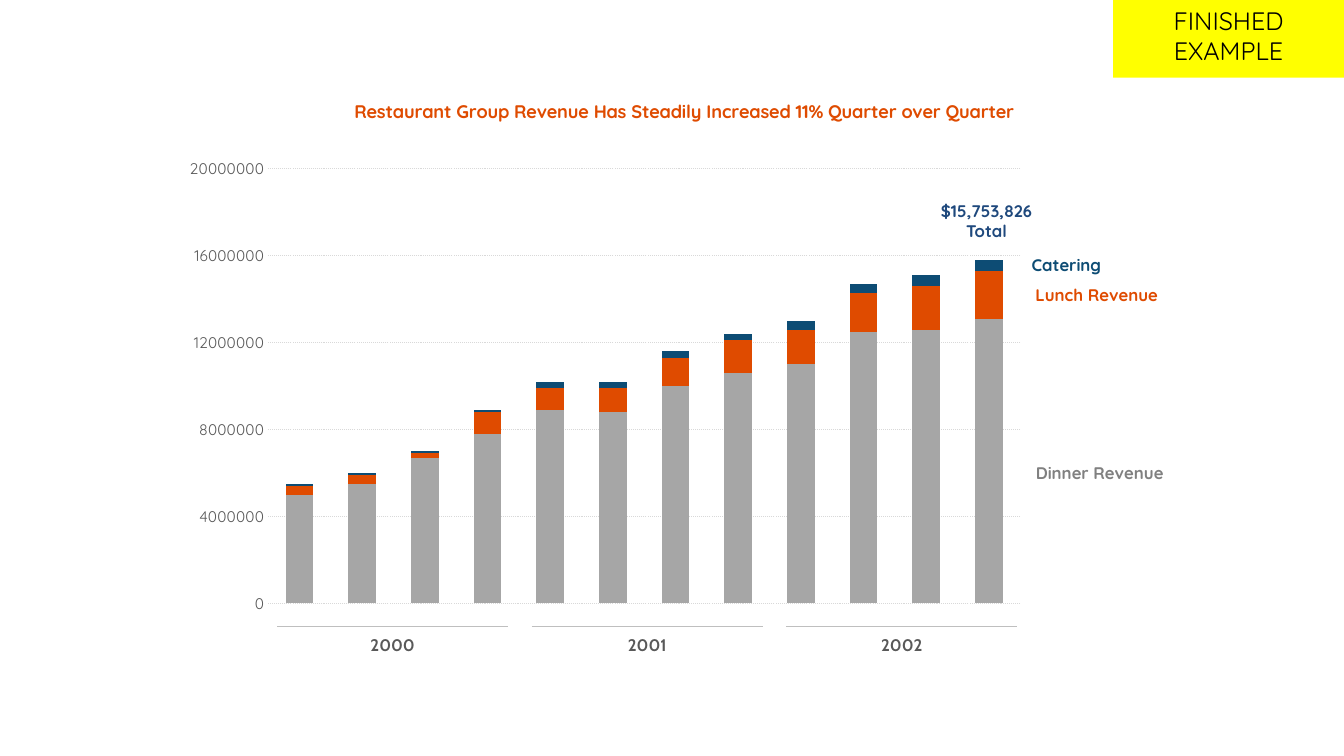
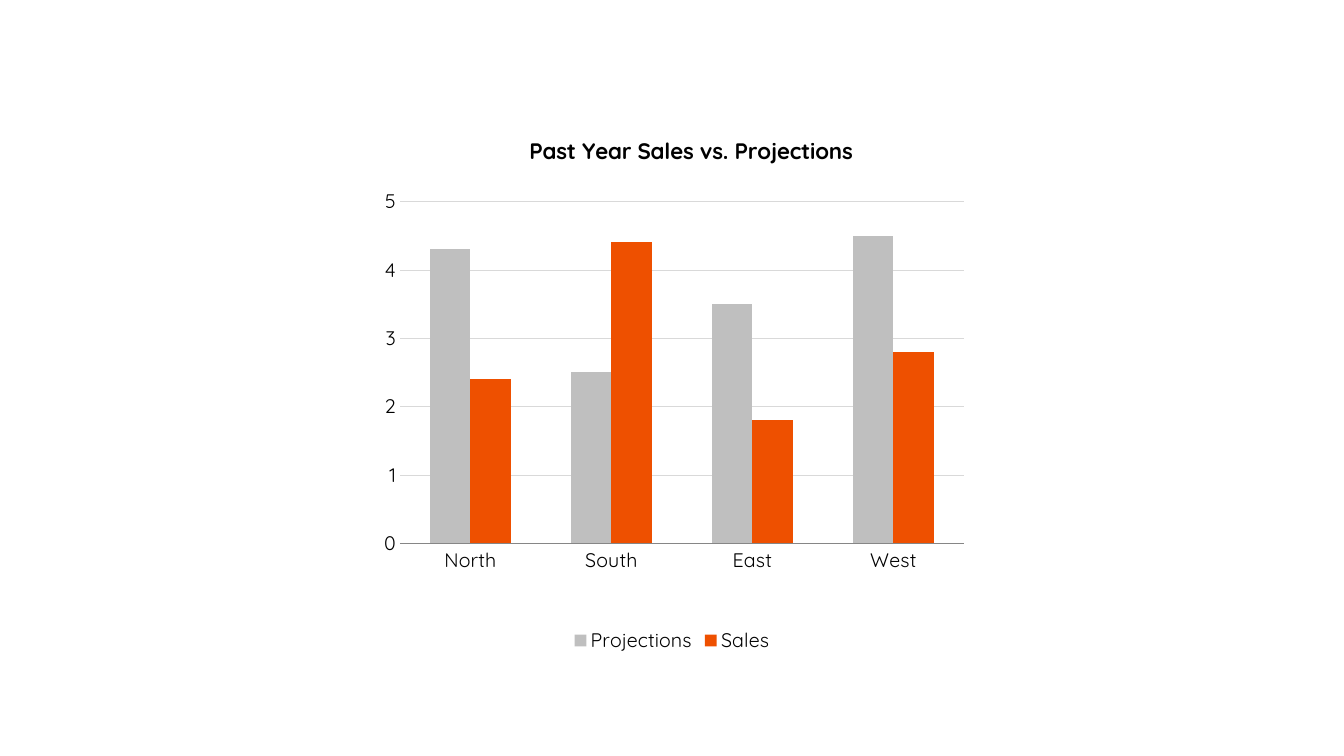
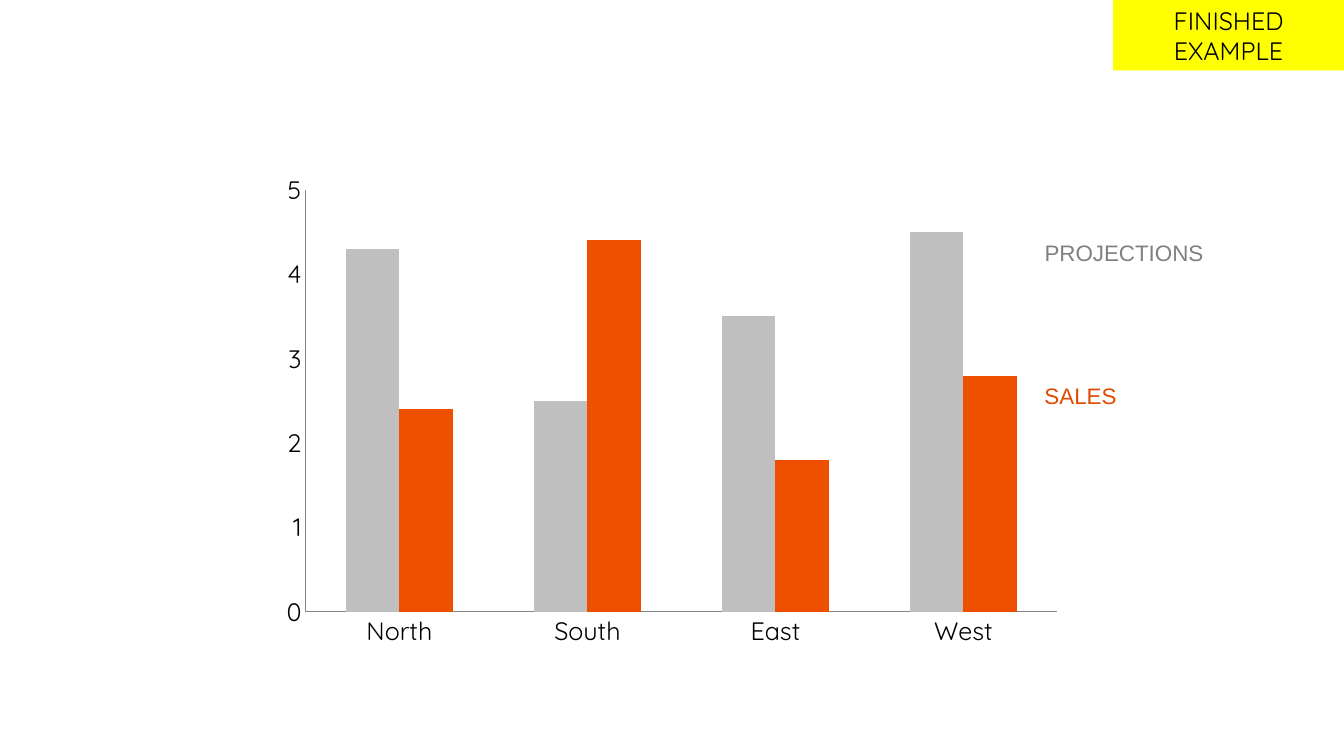
"""Three slides of revenue and sales column charts."""
import copy

from pptx import Presentation
from pptx import util as u
from pptx.chart import data as chart_data
from pptx.dml import color as dml
from pptx.enum import chart as ch, dml as dash, shapes, text
from pptx.oxml import parse_xml
from pptx.oxml.ns import nsdecls, qn

FONT = "Quicksand"
ORANGE, NAVY, BLACK, GRID, AXIS = "DF4B00", "0D4C74", "000000", "D9D9D9", "868686"

REVENUE = {
    "box": (1.78, 0.77, 10.01, 5.96),
    "kind": ch.XL_CHART_TYPE.COLUMN_STACKED,
    "categories": [str(quarter) for quarter in range(1, 13)],
    "names": ["Dinner Revenue", "Lunch Revenue", "Catering"],
    "series": [
        ("A6A6A6", [50, 55, 67, 78, 89, 88, 100, 106, 110, 125, 126, 131]),
        (ORANGE, [4, 4, 2, 10, 10, 11, 13, 15, 16, 18, 20, 22]),
        (NAVY, [1, 1, 1, 1, 3, 3, 3, 3, 4, 4, 5, 5]),
    ],
    "scale": 100_000,
    "top": 20_000_000, "step": 4_000_000, "gap": 125,
    "plot": (0.088, 0.152, 0.745, 0.723),
    "title": ("Restaurant Group Revenue Has Steadily Increased 11% Quarter over Quarter",
              13, ORANGE, (0.17, 0.03)),
    "size": 11, "ink": "595959", "grid": 0.75, "dotted": True,
    "category_axis": False, "value_line": False,
    "labels": [("808080", 0.11, 0.02), (ORANGE, 0.107, 0), (NAVY, 0.077, 0)],
}
SALES = {
    "kind": ch.XL_CHART_TYPE.COLUMN_CLUSTERED,
    "categories": ["North", "South", "East", "West"],
    "series": [("BFBFBF", [4.3, 2.5, 3.5, 4.5]), ("EE5000", [2.4, 4.4, 1.8, 2.8])],
    "scale": 1, "top": 5, "step": 1, "gap": 150, "ink": BLACK, "category_axis": True,
}
BEFORE = SALES | {
    "box": (3.25, 1.2, 6.83, 5.32),
    "names": ["Projections", "Sales"],
    "plot": (0.105, 0.15, 0.819, 0.638),
    "title": ("Past Year Sales vs. Projections", 16, BLACK, (0.287, 0.019)),
    "size": 14, "grid": 0.25, "value_line": False, "legend": True,
}
AFTER = SALES | {
    "box": (2.68, 1.63, 7.96, 4.89),
    "names": ["Series 1", "Series 2"],
    "plot": (0.044, 0.052, 0.937, 0.856),
    "size": 18, "value_line": True, "second_axis": True,
}
YEARS = ["2000", "2001", "2002"]
YEAR_LEFT, YEAR_STEP, YEAR_WIDTH, YEAR_TOP = 2.75, 2.525, 2.29, 6.21
SERIES_NOTES = [("SALES", ORANGE, 3.72, 1.83), ("PROJECTIONS", "808080", 2.3, 2.42)]


def rgb(value):
    return dml.RGBColor.from_string(value)


def inches(values):
    return [u.Inches(value) for value in values]


def style(font, size, ink, bold=False, name=FONT):
    font.name, font.size, font.bold = name, u.Pt(size), bold
    font.color.rgb = rgb(ink)


def fill(part, ink):
    part.fill.solid()
    part.fill.fore_color.rgb = rgb(ink)


def stroke(line, ink, width):
    line.color.rgb = rgb(ink)
    line.width = u.Pt(width)


def place(parent, index, numbers, modes=""):
    """Give a chart part a manual layout, as fractions of the chart."""
    for old in parent.findall(qn("c:layout")):
        parent.remove(old)
    parts = "".join(f'<c:{key} val="{number}"/>' for key, number in zip("xywh", numbers))
    parent.insert(index, parse_xml(
        f'<c:layout {nsdecls("c")}><c:manualLayout>{modes}{parts}</c:manualLayout></c:layout>'))


EDGES = '<c:xMode val="edge"/><c:yMode val="edge"/>'


def add_title(chart, wording, size, ink, corner):
    frame = chart.chart_title.text_frame
    frame.text = wording
    style(frame.paragraphs[0].font, size, ink, True)
    place(chart.element.xpath("//c:title")[0], 1, corner, EDGES)


def label_last_column(chart, labels):
    """Name each series to the right of its last column."""
    for series, (ink, dx, dy) in zip(chart.plots[0].series, labels):
        series.data_labels.show_value = False
        label = series.points[len(series.values) - 1].data_label
        style(label.font, 12, ink, True)
        label.position = ch.XL_LABEL_POSITION.CENTER
    for node, (ink, dx, dy) in zip(chart.element.xpath("//c:dLbl"), labels):
        place(node, 1, (dx, dy))
        node.find(qn("c:showVal")).set("val", "0")
        node.find(qn("c:showSerName")).set("val", "1")
        node.xpath(".//a:bodyPr")[0].set("wrap", "none")
    for node in chart.element.xpath("//c:showLeaderLines"):
        node.set("val", "0")


def move_to_second_axis(chart):
    """Put the last series on a hidden pair of axes at the right."""
    area = chart.element.xpath("//c:plotArea")[0]
    first = area.find(qn("c:barChart"))
    axes = [area.find(qn("c:catAx")), area.find(qn("c:valAx"))]
    second = copy.deepcopy(first)
    hidden = [copy.deepcopy(axis) for axis in axes]
    first.remove(first.findall(qn("c:ser"))[-1])
    for series in second.findall(qn("c:ser"))[:-1]:
        second.remove(series)
    ids = {axis.find(qn("c:axId")).get("val"): str(number)
           for number, axis in enumerate(axes, 5001)}
    for part in [second, *hidden]:
        for node in part.xpath("./c:axId | ./c:crossAx"):
            node.set("val", ids[node.get("val")])
    for axis in hidden:
        axis.find(qn("c:delete")).set("val", "1")
    hidden[1].find(qn("c:axPos")).set("val", "r")
    hidden[1].find(qn("c:crosses")).set("val", "max")
    first.addnext(second)
    for axis in hidden:
        area.findall(qn("c:valAx"))[-1].addnext(axis)


def add_chart(page, look):
    data = chart_data.CategoryChartData()
    data.categories = look["categories"]
    for name, (_, values) in zip(look["names"], look["series"]):
        data.add_series(name, [value * look["scale"] for value in values])
    chart = page.shapes.add_chart(look["kind"], *inches(look["box"]), data).chart
    style(chart.font, look["size"], look["ink"])

    plot = chart.plots[0]
    plot.gap_width, plot.vary_by_categories = look["gap"], False
    plot.overlap = 100 if look["kind"] == ch.XL_CHART_TYPE.COLUMN_STACKED else 0
    for series, (ink, _) in zip(plot.series, look["series"]):
        fill(series.format, ink)

    across, up = chart.category_axis, chart.value_axis
    for axis in (across, up):
        axis.major_tick_mark = axis.minor_tick_mark = ch.XL_TICK_MARK.NONE
        style(axis.tick_labels.font, look["size"], look["ink"])
        stroke(axis.format.line, AXIS, 0.75)
    across.visible = look["category_axis"]
    up.minimum_scale, up.maximum_scale, up.major_unit = 0, look["top"], look["step"]
    up.tick_labels.number_format, up.tick_labels.number_format_is_linked = "0", False
    if not look["value_line"]:
        up.format.line.fill.background()
    up.has_major_gridlines = "grid" in look
    if "grid" in look:
        line = up.major_gridlines.format.line
        stroke(line, GRID, look["grid"])
        if look.get("dotted"):
            line.dash_style = dash.MSO_LINE.ROUND_DOT

    chart.has_legend = look.get("legend", False)
    if chart.has_legend:
        chart.legend.position = ch.XL_LEGEND_POSITION.BOTTOM
        chart.legend.include_in_layout = False
        style(chart.legend.font, look["size"], look["ink"])
    chart.has_title = "title" in look
    if chart.has_title:
        add_title(chart, *look["title"])
    if "labels" in look:
        label_last_column(chart, look["labels"])
    if look.get("second_axis"):
        move_to_second_axis(chart)
    place(chart.element.xpath("//c:plotArea")[0], 0, look["plot"],
          '<c:layoutTarget val="inner"/>' + EDGES)


def add_text(page, wording, box, size, ink, bold=False, name=FONT,
             align=text.PP_ALIGN.CENTER, insets=(0.1, 0.05)):
    frame = page.shapes.add_textbox(*inches(box)).text_frame
    frame.word_wrap = True
    frame.margin_left = frame.margin_right = u.Inches(insets[0])
    frame.margin_top = frame.margin_bottom = u.Inches(insets[1])
    frame.text = wording
    for para in frame.paragraphs:
        para.alignment = align
        style(para.font, size, ink, bold, name)


def add_tag(page, height):
    tag = page.shapes.add_shape(shapes.MSO_SHAPE.RECTANGLE, *inches((11.04, 0, 2.29, height)))
    tag.shadow.inherit = False
    fill(tag, "FFFF00")
    tag.line.fill.background()
    tag.text_frame.text = "FINISHED EXAMPLE"
    tag.text_frame.vertical_anchor = text.MSO_ANCHOR.TOP
    para = tag.text_frame.paragraphs[0]
    para.alignment = text.PP_ALIGN.CENTER
    style(para.font, 18, BLACK)


def add_year(page, index, year):
    left = YEAR_LEFT + index * YEAR_STEP
    add_text(page, year, (left + 0.43, YEAR_TOP + 0.04, 1.43, 0.3), 12, "595959", True, "Cabin")
    rule = page.shapes.add_connector(
        shapes.MSO_CONNECTOR.STRAIGHT, *inches((left, YEAR_TOP, left + YEAR_WIDTH, YEAR_TOP)))
    stroke(rule.line, "BFBFBF", 0.5)
    rule.element.spPr.append(parse_xml(f'<a:effectLst {nsdecls("a")}/>'))


def main():
    deck = Presentation()
    deck.slide_width, deck.slide_height = inches((13.33, 7.5))
    revenue, before, after = [deck.slides.add_slide(deck.slide_layouts[6]) for _ in range(3)]

    add_chart(revenue, REVENUE)
    for index, year in enumerate(YEARS):
        add_year(revenue, index, year)
    add_text(revenue, "$15,753,826\nTotal", (8.88, 1.94, 1.81, 0.5), 12, "1F497D", True)
    add_tag(revenue, 0.77)

    add_chart(before, BEFORE)

    add_chart(after, AFTER)
    for wording, ink, top, width in SERIES_NOTES:
        add_text(after, wording, (10.23, top, width, 0.4), 16, ink, name="Arial",
                 align=text.PP_ALIGN.LEFT, insets=(0.13, 0.07))
    add_tag(after, 0.7)

    deck.save("out.pptx")


if __name__ == "__main__":
    main()
